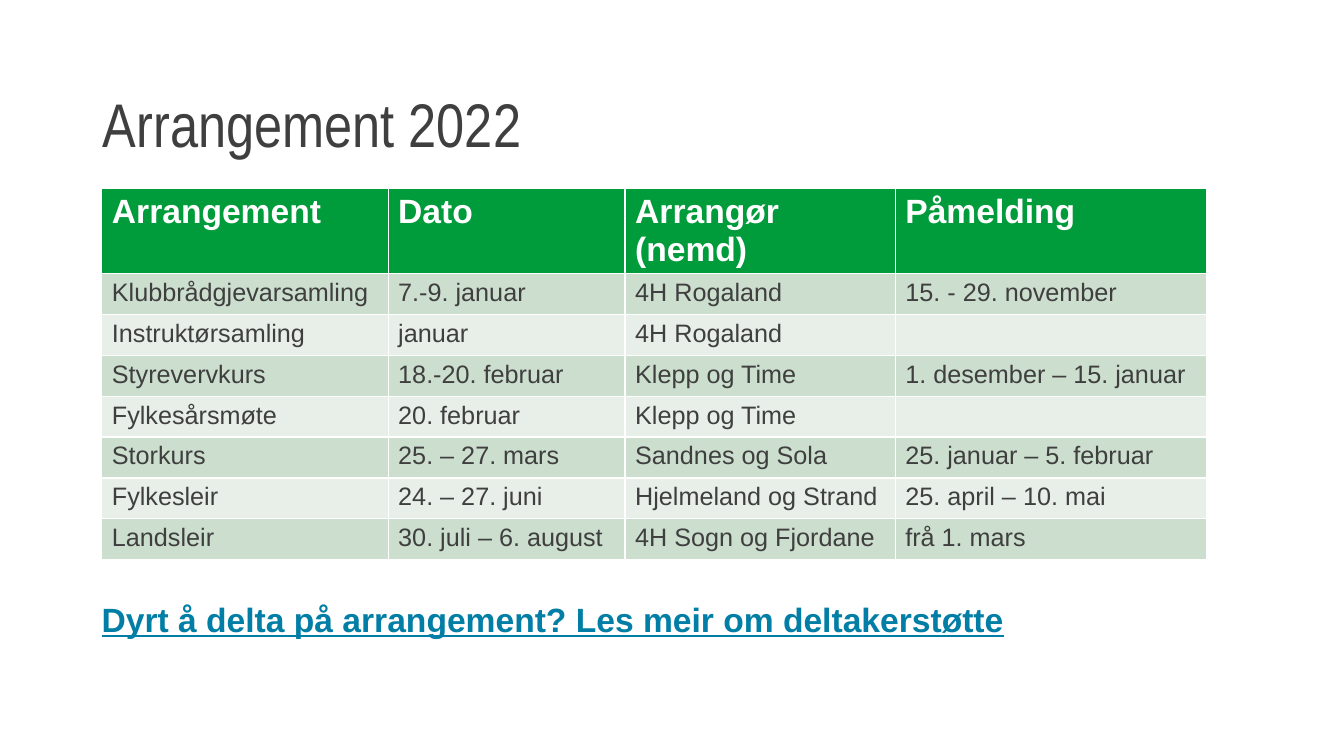
from pptx import Presentation
from pptx import util as u
from pptx.dml.color import RGBColor
from pptx.enum import text as t

WIDE, HIGH = u.Inches(13.33), u.Inches(7.5)
WHITE = RGBColor(0xFF, 0xFF, 0xFF)
GREEN = RGBColor(0x00, 0x9B, 0x3A)
SAGE = RGBColor(0xCC, 0xDE, 0xCE)
MIST = RGBColor(0xE7, 0xEF, 0xE8)
DARK = RGBColor(0x3F, 0x3F, 0x3F)
BLUE = RGBColor(0x00, 0x7E, 0xA5)

COLS = [2.84, 2.35, 2.68, 3.09]
HEAD, ROW = u.Inches(0.83), u.Pt(29.2)
EVENTS = [
    ["Arrangement", "Dato", "Arrangør (nemd)", "Påmelding"],
    ["Klubbrådgjevarsamling", "7.-9. januar", "4H Rogaland", "15. - 29. november"],
    ["Instruktørsamling", "januar", "4H Rogaland", ""],
    ["Styrevervkurs", "18.-20. februar", "Klepp og Time", "1. desember – 15. januar"],
    ["Fylkesårsmøte", "20. februar", "Klepp og Time", ""],
    ["Storkurs", "25. – 27. mars", "Sandnes og Sola", "25. januar – 5. februar"],
    ["Fylkesleir", "24. – 27. juni", "Hjelmeland og Strand", "25. april – 10. mai"],
    ["Landsleir", "30. juli – 6. august", "4H Sogn og Fjordane", "frå 1. mars"],
]


def style(para, size, color, bold=False, name="Arial"):
    font = para.font
    font.name, font.size, font.bold = name, u.Pt(size), bold
    font.color.rgb = color


def add_title(slide, words):
    title = slide.shapes.title
    title.left, title.top = u.Inches(0.92), u.Inches(0.69)
    title.width, title.height = u.Inches(10.18), u.Inches(1.16)
    frame = title.text_frame
    frame.text = words
    frame.auto_size = t.MSO_AUTO_SIZE.NONE
    frame.vertical_anchor = t.MSO_ANCHOR.MIDDLE
    para = frame.paragraphs[0]
    para.alignment, para.line_spacing = t.PP_ALIGN.LEFT, 0.9
    style(para, 44, DARK, name="Arial Narrow")


def fill_cell(cell, words, row):
    cell.text = words
    cell.fill.solid()
    para = cell.text_frame.paragraphs[0]
    if row == 0:
        cell.fill.fore_color.rgb = GREEN
        style(para, 24, WHITE, True)
    else:
        cell.fill.fore_color.rgb = SAGE if row % 2 else MIST
        style(para, 18, DARK)


def add_events(slide):
    high = HEAD + ROW * (len(EVENTS) - 1)
    frame = slide.shapes.add_table(
        len(EVENTS), len(COLS), u.Inches(1.01), u.Inches(1.87),
        u.Inches(sum(COLS)), high)
    table = frame.table
    for col, width in zip(table.columns, COLS):
        col.width = u.Inches(width)
    for row, line in enumerate(EVENTS):
        table.rows[row].height = ROW if row else HEAD
        for col, words in enumerate(line):
            fill_cell(table.cell(row, col), words, row)


def add_note(slide, words):
    box = slide.shapes.add_textbox(
        u.Inches(0.91), u.Inches(5.89), u.Inches(9.24), u.Inches(0.5))
    frame = box.text_frame
    frame.word_wrap = False
    frame.auto_size = t.MSO_AUTO_SIZE.SHAPE_TO_FIT_TEXT
    frame.text = words
    para = frame.paragraphs[0]
    style(para, 24, BLUE, True)
    para.font.underline = True


def main():
    deck = Presentation()
    deck.slide_width, deck.slide_height = WIDE, HIGH
    slide = deck.slides.add_slide(deck.slide_layouts[5])
    add_title(slide, "Arrangement 2022")
    add_events(slide)
    add_note(slide, "Dyrt å delta på arrangement? Les meir om deltakerstøtte")
    deck.save("out.pptx")


if __name__ == "__main__":
    main()
